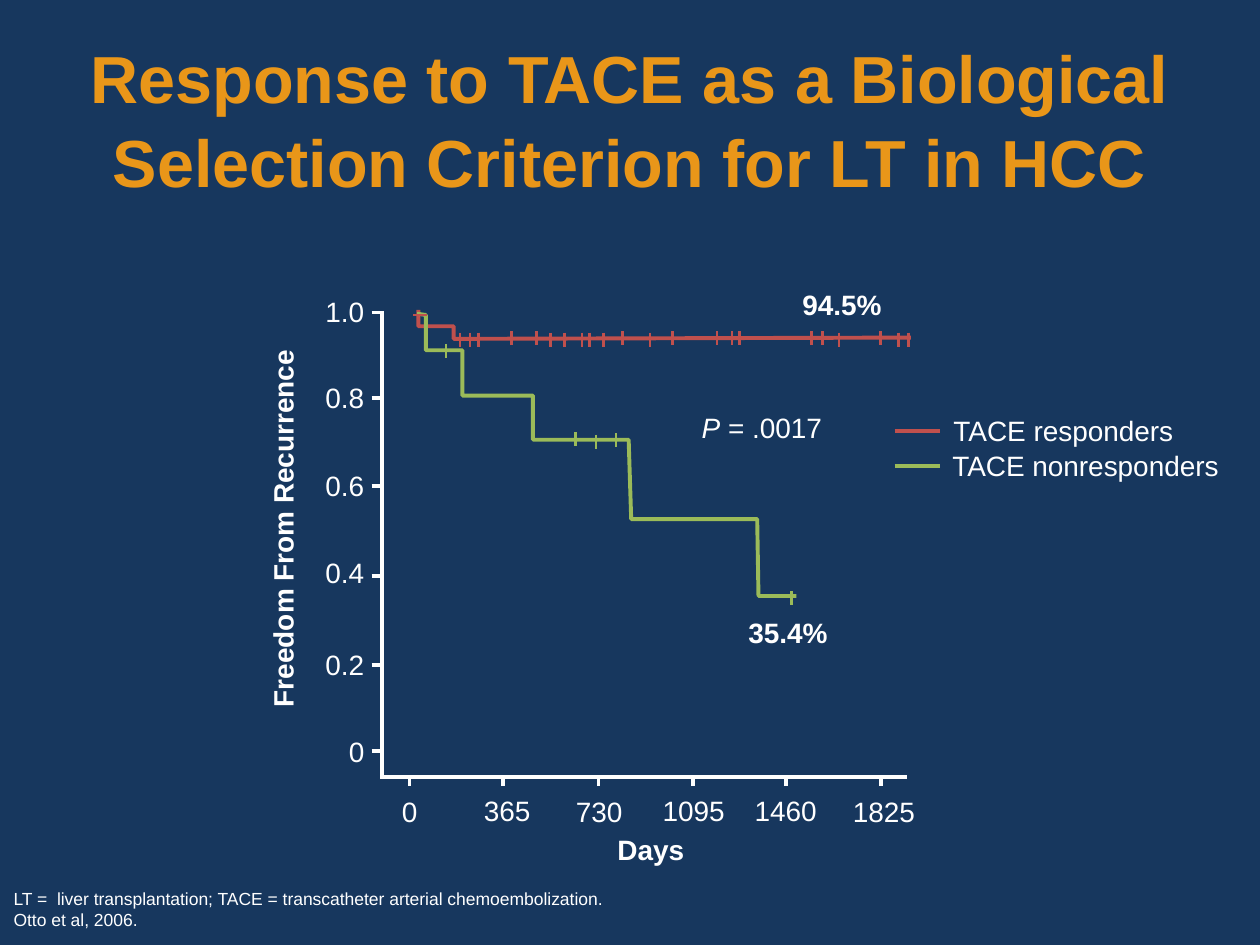
from typing import NamedTuple

from lxml import etree
from pptx import Presentation
from pptx.dml.color import RGBColor
from pptx.enum import shapes, text
from pptx.oxml import ns
from pptx.util import Inches, Pt

NAVY = RGBColor(0x17, 0x37, 0x5E)
WHITE = RGBColor(0xFF, 0xFF, 0xFF)
GOLD = RGBColor(0xE9, 0x96, 0x19)
RED = RGBColor(0xC0, 0x50, 0x4D)
GREEN = RGBColor(0x9B, 0xBB, 0x59)
LEFT, MID, RIGHT = text.PP_ALIGN.LEFT, text.PP_ALIGN.CENTER, text.PP_ALIGN.RIGHT

AXIS_X, AXIS_Y = 3.03, 6.17
ROW = 0.37
MARK = 0.11


class Tick(NamedTuple):
    label: str
    at: float
    left: float
    top: float
    width: float


class Curve(NamedTuple):
    name: str
    color: RGBColor
    steps: list[tuple[float, float]]
    marks: dict[float, list[float]]
    key: float
    box: tuple[float, float, float, float]


Y_TICKS = [
    Tick("1.0", 2.48, 2.48, 2.29, 0.51),
    Tick("0.8", 3.16, 2.48, 2.97, 0.51),
    Tick("0.6", 3.86, 2.48, 3.67, 0.51),
    Tick("0.4", 4.57, 2.48, 4.36, 0.51),
    Tick("0.2", 5.28, 2.48, 5.09, 0.51),
    Tick("0", 5.96, 2.67, 5.78, 0.32),
]
X_TICKS = [
    Tick("0", 3.25, 3.09, 6.26, 0.32),
    Tick("365", 3.99, 3.74, 6.25, 0.57),
    Tick("730", 4.75, 4.47, 6.26, 0.57),
    Tick("1095", 5.5, 5.16, 6.25, 0.69),
    Tick("1460", 6.24, 5.89, 6.25, 0.69),
    Tick("1825", 6.99, 6.67, 6.26, 0.69),
]
CURVES = [
    Curve(
        "TACE responders", RED,
        [(3.32, 2.46), (3.32, 2.59), (3.6, 2.59), (3.6, 2.69), (7.23, 2.68)],
        {
            2.63: [4.06, 4.26, 4.94, 5.34, 5.69, 5.81, 5.87, 6.44, 6.53, 6.99],
            2.64: [3.65, 3.73, 3.8, 4.37, 4.48, 4.62, 4.68, 4.79, 5.16, 6.66, 7.13, 7.21],
        },
        3.42, (7.43, 3.23, 2.02, ROW),
    ),
    Curve(
        "TACE nonresponders", GREEN,
        [(3.31, 2.49), (3.38, 2.5), (3.38, 2.78), (3.67, 2.78), (3.67, 3.14), (4.23, 3.14),
         (4.23, 3.49), (4.99, 3.49), (5.01, 4.12), (6.01, 4.12), (6.02, 4.73), (6.32, 4.73)],
        {2.73: [3.54], 3.43: [4.57], 3.45: [4.73], 3.44: [4.89], 4.69: [6.28]},
        3.7, (7.34, 3.51, 2.55, ROW),
    ),
]


def write(slide, words: str, box: tuple[float, float, float, float], *, size: float = 16,
          color: RGBColor = WHITE, bold: bool = False, align=LEFT, wrap: bool = False,
          lead: str = "", turn: float = 0, pitch: float | None = None,
          anchor=text.MSO_ANCHOR.TOP) -> None:
    shape = slide.shapes.add_textbox(*map(Inches, box))
    shape.rotation = turn
    frame = shape.text_frame
    frame.word_wrap = wrap
    frame.vertical_anchor = anchor
    for i, line in enumerate(words.split("\n")):
        para = frame.paragraphs[0] if i == 0 else frame.add_paragraph()
        para.alignment = align
        para.line_spacing = pitch
        for part, slant in ((lead, True), (line, False)):
            if part:
                run = para.add_run()
                run.text = part
                font = run.font
                font.name, font.size, font.bold, font.italic = "Arial", Pt(size), bold, slant
                font.color.rgb = color


def rule(slide, x1: float, y1: float, x2: float, y2: float, color: RGBColor = WHITE,
         width: float = 2.25) -> None:
    line = slide.shapes.add_connector(
        shapes.MSO_CONNECTOR.STRAIGHT, *map(Inches, (x1, y1, x2, y2)))
    line.line.color.rgb = color
    line.line.width = Pt(width)
    etree.SubElement(line._element.spPr, ns.qn("a:effectLst"))


def axes(slide) -> None:
    rule(slide, AXIS_X, 2.47, AXIS_X, AXIS_Y)
    rule(slide, 3.02, AXIS_Y, 7.2, AXIS_Y)
    for tick in Y_TICKS:
        rule(slide, 2.95, tick.at, AXIS_X, tick.at)
    for tick in X_TICKS:
        rule(slide, tick.at, 6.24, tick.at, AXIS_Y)
    for ticks, align in ((Y_TICKS, RIGHT), (X_TICKS, MID)):
        for tick in ticks:
            write(slide, tick.label, (tick.left, tick.top, tick.width, ROW), align=align)
    write(slide, "Freedom From Recurrence", (0.71, 4.01, 3.07, ROW),
          bold=True, align=MID, turn=270)
    write(slide, "Days", (3.07, 6.56, 4.19, ROW), bold=True, align=MID, wrap=True)


def plot(slide, curve: Curve) -> None:
    points = [(Inches(x), Inches(y)) for x, y in curve.steps]
    path = slide.shapes.build_freeform(*points[0])
    path.add_line_segments(points[1:], close=False)
    shape = path.convert_to_shape()
    shape.shadow.inherit = False
    shape.fill.background()
    shape.line.color.rgb = curve.color
    shape.line.width = Pt(2.25)
    for top, marks in curve.marks.items():
        for x in marks:
            rule(slide, x, top, x, top + MARK, curve.color, 1.5)
    rule(slide, 7.1, curve.key, 7.46, curve.key, curve.color)
    write(slide, curve.name, curve.box, align=MID, wrap=True)


def main() -> None:
    deck = Presentation()
    deck.slide_width, deck.slide_height = Inches(10), Inches(7.5)
    slide = deck.slides.add_slide(deck.slide_layouts[6])
    slide.background.fill.solid()
    slide.background.fill.fore_color.rgb = NAVY
    write(slide, "Response to TACE as a Biological Selection Criterion for LT in HCC",
          (0.5, 0.3, 9, 1.25), size=38, color=GOLD, bold=True, align=MID, wrap=True,
          pitch=1.05, anchor=text.MSO_ANCHOR.MIDDLE)
    axes(slide)
    for curve in CURVES:
        plot(slide, curve)
    rule(slide, 3.28, 2.5, 3.39, 2.5, RED, 1.5)
    write(slide, "94.5%", (6.27, 2.23, 0.85, ROW), bold=True)
    write(slide, "35.4%", (5.84, 4.84, 0.85, ROW), bold=True)
    write(slide, " = .0017", (5.47, 3.21, 1.18, ROW), lead="P")
    write(slide, "LT =  liver transplantation; TACE = transcatheter arterial chemoembolization.\n"
          "Otto et al, 2006.", (0.01, 7, 4.94, 0.44), size=10)
    deck.save("out.pptx")


if __name__ == "__main__":
    main()
